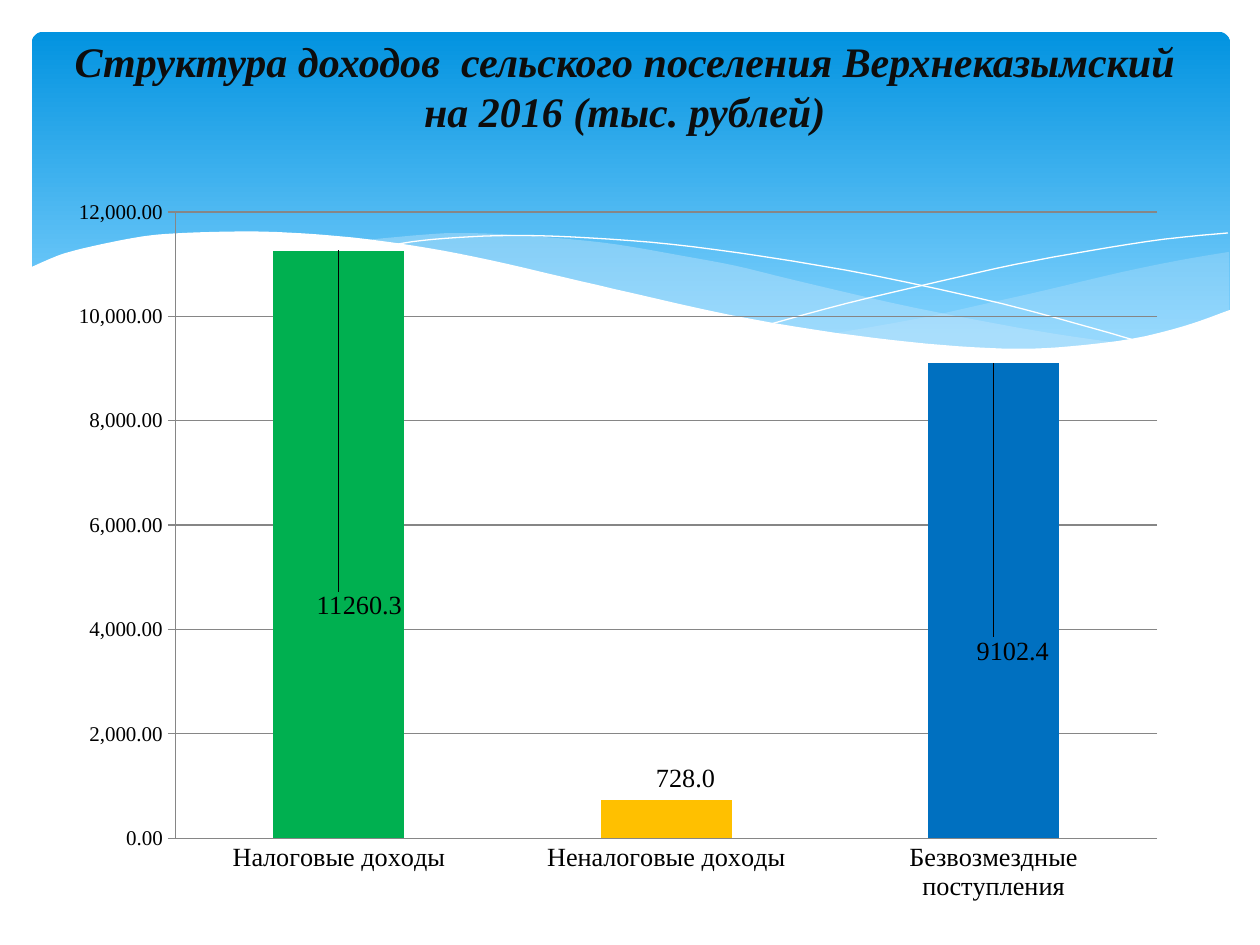
from dataclasses import dataclass
from typing import Optional

from lxml import etree
from pptx import Presentation
from pptx.chart.data import CategoryChartData
from pptx.dml.color import RGBColor
from pptx.enum.chart import XL_CHART_TYPE, XL_LABEL_POSITION, XL_TICK_MARK
from pptx.enum.shapes import MSO_SHAPE
from pptx.enum.text import MSO_ANCHOR, PP_ALIGN
from pptx.oxml.ns import qn
from pptx.util import Cm, Pt

COLUMN = XL_CHART_TYPE.COLUMN_CLUSTERED
OUTSIDE_END = XL_LABEL_POSITION.OUTSIDE_END
ROUND_RECT = MSO_SHAPE.ROUNDED_RECTANGLE
TICK_NONE, TICK_OUT = XL_TICK_MARK.NONE, XL_TICK_MARK.OUTSIDE
MIDDLE, CENTER = MSO_ANCHOR.MIDDLE, PP_ALIGN.CENTER

FONT = "Times New Roman"
COLORS = {
    "sky_top": "0293E0", "sky_bottom": "83D3FE", "mist": "C6E7FC",
    "white": "FFFFFF", "title": "0D0D0D", "text": "000000", "axis": "868686",
    "tax": "00B050", "non_tax": "FFC000", "transfers": "0070C0",
}
UNIT = Cm(0.00254)  # wave grid step; knots are given in tens of steps
SMOOTH_STEPS = 4

Knots = list[tuple[int, int]]


@dataclass
class Wave:
    curves: list[Knots]  # smooth curves, joined by straight edges
    color: str
    alpha: Optional[int] = None  # opacity in percent
    outline: bool = False


@dataclass
class Income:
    name: str
    value: float
    color: str
    label_dx: float  # label shift as a share of the chart
    label_dy: float


WAVES = [
    Wave([[(976, 200), (935, 207), (891, 216), (832, 230), (779, 242), (729, 253),
           (661, 265)],
          [(661, 265), (705, 271), (745, 275), (781, 277), (814, 278), (844, 277),
           (872, 274), (897, 270), (921, 265), (949, 257), (976, 247)]], "mist", 29),
    Wave([[(893, 273), (837, 265), (775, 254), (706, 240), (629, 222), (584, 211),
           (541, 203), (489, 194), (442, 189), (399, 186), (361, 185), (328, 187),
           (286, 191)],
          [(286, 191), (342, 199), (404, 211), (449, 222), (530, 240), (601, 255),
           (665, 266), (722, 274), (773, 277), (818, 278), (857, 277),
           (893, 273)]], "mist", 40),
    Wave([[(309, 195), (335, 191), (374, 188), (416, 187), (469, 189), (533, 194),
           (608, 204), (695, 219), (795, 241), (869, 261), (907, 272)]],
         "white", outline=True),
    Wave([[(613, 257), (672, 241), (748, 223), (806, 210), (866, 199), (924, 190),
           (975, 185)]], "white", outline=True),
    Wave([[(977, 246), (940, 259), (899, 269), (850, 275), (809, 277), (761, 275),
           (708, 270), (648, 262), (579, 250), (503, 233), (447, 220), (391, 207),
           (340, 197), (292, 190), (250, 186), (211, 184), (177, 184), (146, 185),
           (119, 187), (95, 191), (67, 197), (46, 203), (23, 213)],
          [(23, 329), (977, 329)]], "white"),
]

INCOMES = [
    Income("Налоговые доходы", 11260.3, "tax", 0.018, 0.503),
    Income("Неналоговые доходы", 728.0, "non_tax", 0.017, -0.003),
    Income("Безвозмездные поступления", 9102.4, "transfers", 0.017, 0.413),
]


def rgb(name: str) -> RGBColor:
    return RGBColor.from_string(COLORS[name])


def style_font(font, color: str, **values) -> None:
    for key, value in {"name": FONT, **values}.items():
        setattr(font, key, value)
    font.color.rgb = rgb(color)


def smooth(knots: Knots) -> list[tuple[float, float]]:
    """Catmull-Rom points through the knots."""
    if len(knots) < 3:
        return list(knots)
    ends = [knots[0], *knots, knots[-1]]
    points = [knots[0]]
    for a, b, c, d in zip(ends, ends[1:], ends[2:], ends[3:]):
        for step in range(1, SMOOTH_STEPS + 1):
            t = step / SMOOTH_STEPS
            points.append(tuple(
                q + t / 2 * (r - p + t * (2*p - 5*q + 4*r - s + t * (3*(q - r) + s - p)))
                for p, q, r, s in zip(a, b, c, d)))
    return points


def draw_panel(s) -> None:
    panel = s.shapes.add_shape(ROUND_RECT, Cm(0.64), Cm(0.64), Cm(24.16), Cm(6.86))
    panel.adjustments[0] = 0.034
    panel.shadow.inherit = False
    panel.line.fill.background()
    panel.fill.gradient()
    panel.fill.gradient_angle = 270
    stops = zip(panel.fill.gradient_stops, ("sky_top", "sky_bottom"), (0, 0.9))
    for stop, color, position in stops:
        stop.color.rgb = rgb(color)
        stop.position = position


def draw_wave(s, wave: Wave) -> None:
    points = [(x * 10, y * 10) for curve in wave.curves for x, y in smooth(curve)]
    builder = s.shapes.build_freeform(*points[0], scale=UNIT)
    builder.add_line_segments(points[1:], close=not wave.outline)
    shape = builder.convert_to_shape()
    shape.shadow.inherit = False
    if wave.outline:
        shape.fill.background()
        shape.line.color.rgb = rgb(wave.color)
        shape.line.width = Pt(0)
        return
    shape.line.fill.background()
    shape.fill.solid()
    shape.fill.fore_color.rgb = rgb(wave.color)
    if wave.alpha is not None:
        color = shape._element.spPr.find(f"{qn('a:solidFill')}/{qn('a:srgbClr')}")
        etree.SubElement(color, qn("a:alpha"), val=str(wave.alpha * 1000))


def manual_layout(**values) -> etree._Element:
    layout = etree.Element(qn("c:layout"))
    manual = etree.SubElement(layout, qn("c:manualLayout"))
    for key, value in values.items():
        etree.SubElement(manual, qn(f"c:{key}"), val=str(value))
    return layout


def style_axis(axis, size: int, tick) -> None:
    style_font(axis.tick_labels.font, "text", size=Pt(size))
    axis.major_tick_mark = tick
    axis.minor_tick_mark = TICK_NONE
    axis.format.line.color.rgb = rgb("axis")


def draw_chart(s, incomes: list[Income]) -> None:
    data = CategoryChartData(number_format="0.0")
    data.categories = [income.name for income in incomes]
    data.add_series("Доходы", [income.value for income in incomes])
    chart = s.shapes.add_chart(COLUMN, Cm(1.27), Cm(3.33), Cm(22.86), Cm(15.01), data).chart
    chart.has_legend = chart.has_title = False
    style_font(chart.font, "text", size=Pt(10), name="Calibri")

    # Plot area and axes
    plot = chart.plots[0]
    plot.vary_by_categories = False
    plot.gap_width = 150
    area = chart._chartSpace.chart.plotArea
    for old in area.findall(qn("c:layout")):
        area.remove(old)
    area.insert(0, manual_layout(layoutTarget="inner", xMode="edge", yMode="edge",
                                 x=0.099, y=0.063, w=0.866, h=0.841))
    style_axis(chart.category_axis, 15, TICK_NONE)
    values = chart.value_axis
    style_axis(values, 12, TICK_OUT)
    values.minimum_scale, values.maximum_scale, values.major_unit = 0, 12000, 2000
    values.tick_labels.number_format = "#,##0.00"
    values.tick_labels.number_format_is_linked = False
    values.major_gridlines.format.line.color.rgb = rgb("axis")

    # Columns and their labels
    series = plot.series[0]
    labels = series.data_labels
    labels.show_value = True
    labels.number_format, labels.number_format_is_linked = "0.0", False
    style_font(labels.font, "text", size=Pt(15))
    for i, income in enumerate(incomes):
        point = series.points[i]
        point.format.fill.solid()
        point.format.fill.fore_color.rgb = rgb(income.color)
        point.data_label.position = OUTSIDE_END
        style_font(point.data_label.font, "text", size=Pt(15))
    for label, income in zip(series._element.iter(qn("c:dLbl")), incomes):
        label.insert(1, manual_layout(x=income.label_dx, y=income.label_dy))
        number = etree.Element(qn("c:numFmt"), formatCode="0.0", sourceLinked="0")
        label.insert(2, number)


def draw_title(s, text: str) -> None:
    tf = s.shapes.add_textbox(Cm(1.09), Cm(0.53), Cm(23.01), Cm(2.39)).text_frame
    tf.word_wrap = True
    tf.vertical_anchor = MIDDLE
    p = tf.paragraphs[0]
    p.alignment = CENTER
    r = p.add_run()
    r.text = text
    style_font(r.font, "title", size=Pt(24), bold=True, italic=True)


def main() -> None:
    prs = Presentation()
    prs.slide_width, prs.slide_height = Cm(25.4), Cm(19.05)
    s = prs.slides.add_slide(prs.slide_layouts[6])
    draw_panel(s)
    for wave in WAVES:
        draw_wave(s, wave)
    draw_chart(s, INCOMES)
    draw_title(s, "Структура доходов  сельского поселения Верхнеказымский "
                  "на 2016 (тыс. рублей)")
    prs.save("out.pptx")


if __name__ == "__main__":
    main()
